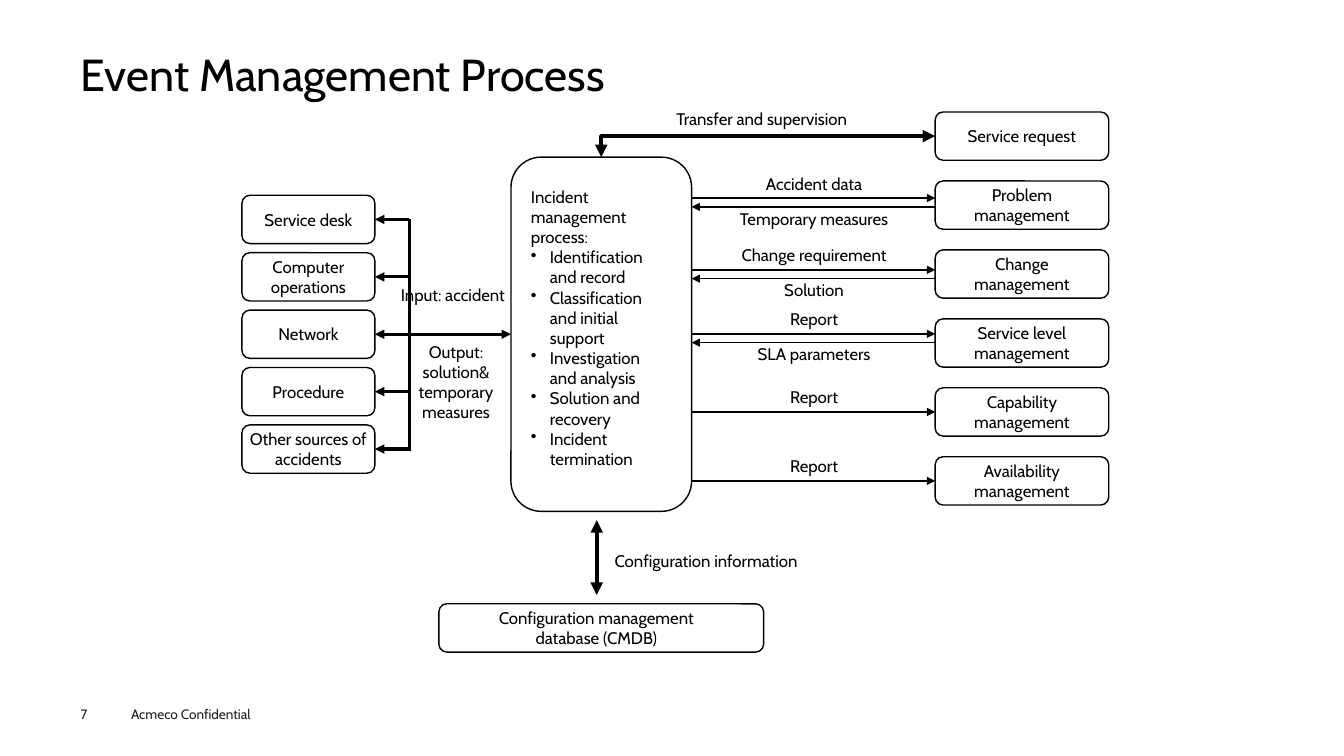
from lxml import etree
from pptx import Presentation
from pptx.dml.color import RGBColor
from pptx.enum.shapes import MSO_CONNECTOR, MSO_SHAPE
from pptx.enum.text import MSO_ANCHOR, MSO_AUTO_SIZE, PP_ALIGN
from pptx.oxml.ns import qn
from pptx.util import Pt

LEFT, CENTER = PP_ALIGN.LEFT, PP_ALIGN.CENTER
MIDDLE, NO_FIT = MSO_ANCHOR.MIDDLE, MSO_AUTO_SIZE.NONE
STRAIGHT, ELBOW = MSO_CONNECTOR.STRAIGHT, MSO_CONNECTOR.ELBOW
ROUND_RECT = MSO_SHAPE.ROUNDED_RECTANGLE
TOP_SIDE, LEFT_SIDE, RIGHT_SIDE = 0, 1, 3

COLORS = {"black": "000000", "footer": "1D1D1B"}
FONT = "Cabin"


def write(sp, text, size=12, align=CENTER, color="black", insets=(7.2, 3.6, 7.2, 3.6)):
    tf = sp.text_frame
    left, top, right, bottom = insets
    frame = {"word_wrap": True, "auto_size": NO_FIT, "vertical_anchor": MIDDLE,
             "margin_left": Pt(left), "margin_top": Pt(top),
             "margin_right": Pt(right), "margin_bottom": Pt(bottom)}
    for name, value in frame.items():
        setattr(tf, name, value)
    for i, line in enumerate(text.split("\n")):
        p = tf.paragraphs[0] if i == 0 else tf.add_paragraph()
        p.alignment = align
        if line.startswith("•"):
            pPr = p._p.get_or_add_pPr()
            pPr.set("marL", str(Pt(13.5)))
            pPr.set("indent", str(-Pt(13.5)))
            etree.SubElement(pPr, qn("a:buChar")).set("char", "•")
        r = p.add_run()
        r.text = line.lstrip("•")
        for name, value in {"name": FONT, "size": Pt(size), "bold": False}.items():
            setattr(r.font, name, value)
        r.font.color.rgb = RGBColor.from_string(COLORS[color])


def connect(start, end, weight, arrows="tailEnd", kind=STRAIGHT):
    c = s.shapes.add_connector(kind, *[Pt(v) for v in (*start, *end)])
    c.line.color.rgb = RGBColor.from_string(COLORS["black"])
    c.line.width = Pt(weight)
    for arrow in arrows.split():
        etree.SubElement(c.line._get_or_add_ln(), qn(f"a:{arrow}")).set("type", "triangle")
    etree.SubElement(c._element.spPr, qn("a:effectLst"))
    return c


prs = Presentation()
prs.slide_width, prs.slide_height = Pt(960), Pt(540)
s = prs.slides.add_slide(prs.slide_layouts[5])

title = s.shapes.title
for name, value in {"left": 57.6, "top": 35.3, "width": 844.5, "height": 39}.items():
    setattr(title, name, Pt(value))
write(title, "Event Management Process", 32, LEFT, insets=(0, 0, 0, 0))
title.text_frame.paragraphs[0].line_spacing = 0.9

BOX_H = 34.5
SOURCE_X, SOURCE_W = 172.8, 95
PROCESS_X, PROCESS_Y, PROCESS_W, PROCESS_H = 365, 112.25, 129, 253
TARGET_X, TARGET_W = 668, 124
process_text = """Incident management process:
•Identification and record
•Classification and initial support
•Investigation and analysis
•Solution and recovery
•Incident termination"""
sources = ["Service desk", "Computer operations", "Network", "Procedure",
           "Other sources of accidents"]
targets = ["Service request", "Problem management", "Change management",
           "Service level management", "Capability management", "Availability management"]

boxes = [(name, SOURCE_X, 139.5 + 41 * i, SOURCE_W, BOX_H, CENTER, (1, 0, 1, 0))
         for i, name in enumerate(sources)]
boxes += [(name, TARGET_X, 80 + 49.25 * i, TARGET_W, BOX_H, CENTER, (9, 0, 9, 0))
          for i, name in enumerate(targets)]
boxes += [
    (process_text, PROCESS_X, PROCESS_Y, PROCESS_W, PROCESS_H, LEFT, (8, 3.6, 10.5, 13)),
    ("Configuration management database (CMDB)", 313.5, 431.3, 232, BOX_H, CENTER,
     (24, 0, 31, 0)),
]
shapes = {}
for text, x, y, w, h, align, insets in boxes:
    sp = s.shapes.add_shape(ROUND_RECT, Pt(x), Pt(y), Pt(w), Pt(h))
    sp.shadow.inherit = False
    sp.fill.background()
    sp.line.color.rgb = RGBColor.from_string(COLORS["black"])
    sp.line.width = Pt(1)
    write(sp, text, align=align, insets=insets)
    shapes[text] = sp
process = shapes[process_text]

BUS_X = 292.5
source_mids = [139.5 + 41 * i + BOX_H / 2 for i in range(len(sources))]
for name, mid in zip(sources, source_mids):
    if name == "Network":
        c = connect((SOURCE_X + SOURCE_W, mid), (PROCESS_X, mid), 2.25, "headEnd tailEnd")
        c.begin_connect(shapes[name], RIGHT_SIDE)
        c.end_connect(process, LEFT_SIDE)
    else:
        c = connect((BUS_X, mid), (SOURCE_X + SOURCE_W, mid), 2.25)
        c.end_connect(shapes[name], RIGHT_SIDE)
connect((BUS_X, source_mids[0]), (BUS_X, source_mids[-1] + 1.5), 2.25, "")

c = connect((TARGET_X, 97.25), (PROCESS_X + PROCESS_W / 2, PROCESS_Y), 3,
            "headEnd tailEnd", ELBOW)
c._element.spPr.find(qn("a:prstGeom")).set("prst", "bentConnector2")
c.begin_connect(shapes["Service request"], LEFT_SIDE)
c.end_connect(process, TOP_SIDE)
connect((426.25, 371.5), (426.25, 425), 3, "headEnd tailEnd")

labels = [
    ("Transfer and supervision", 476, 74.2, 173.5, 21, LEFT),
    ("Input: accident", 273.5, 200.2, 100, 21, CENTER),
    ("Output:\nsolution&\ntemporary measures", 287.3, 242.6, 77, 60.5, CENTER),
    ("Configuration information", 432, 390.2, 160, 21, LEFT),
]
PROCESS_RIGHT = PROCESS_X + PROCESS_W
LABEL_X, LABEL_W = 496.5, 170
flows = [
    (141.5, "Accident data", "Temporary measures"),
    (192.75, "Change requirement", "Solution"),
    (238.5, "Report", "SLA parameters"),
]
for y, sent, returned in flows:
    connect((PROCESS_RIGHT, y), (TARGET_X, y), 1)
    connect((TARGET_X, y + 6.25), (PROCESS_RIGHT, y + 6.25), 1)
    labels += [(sent, LABEL_X, y - 21, LABEL_W, 21, CENTER),
               (returned, LABEL_X, y + 4, LABEL_W, 21, CENTER)]
for i in (4, 5):
    y = 80 + 49.25 * i + BOX_H / 2
    c = connect((PROCESS_RIGHT, y), (TARGET_X, y), 1)
    c.end_connect(shapes[targets[i]], LEFT_SIDE)
    labels.append(("Report", LABEL_X, y - 21, LABEL_W, 21, CENTER))

for text, x, y, w, h, align in labels:
    write(s.shapes.add_textbox(Pt(x), Pt(y), Pt(w), Pt(h)), text, align=align)

for text, x, y, w, h in [("7", 57.6, 504, 28, 12),
                         ("Acmeco Confidential", 93.6, 504, 120, 12)]:
    sp = s.shapes.add_textbox(Pt(x), Pt(y), Pt(w), Pt(h))
    write(sp, text, 9.7, LEFT, "footer", (0, 0, 0, 0))

prs.save("out.pptx")
